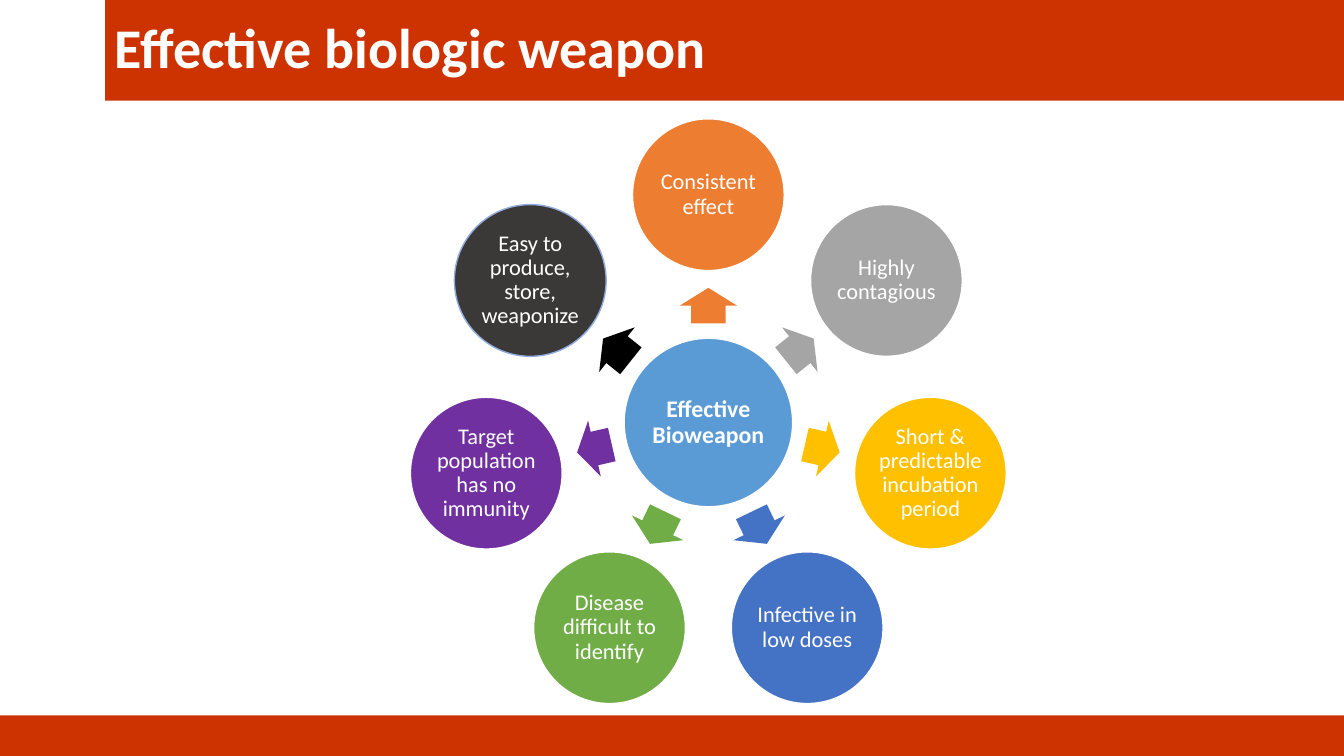
from dataclasses import dataclass
from math import cos, radians, sin

from pptx import Presentation
from pptx.dml.color import RGBColor
from pptx.enum.shapes import MSO_SHAPE
from pptx.enum.text import MSO_ANCHOR, PP_ALIGN
from pptx.util import Pt


@dataclass(frozen=True)
class Theme:
    font: str = "Calibri"
    white: str = "FFFFFF"
    banner: str = "CC3300"
    hub: str = "5B9BD5"
    title_size: int = 40
    hub_size: int = 17
    trait_size: int = 16


theme = Theme()


def add_filled_shape(kind, left, top, width, height, fill, line=None):
    shape = slide.shapes.add_shape(kind, Pt(left), Pt(top), Pt(width), Pt(height))
    shape.shadow.inherit = False
    shape.fill.solid()
    shape.fill.fore_color.rgb = RGBColor.from_string(fill)
    if line:
        shape.line.color.rgb = RGBColor.from_string(line)
        shape.line.width = Pt(1)
    else:
        shape.line.fill.background()
    return shape


def write_text(shape, text, size, bold=False, align=PP_ALIGN.CENTER, inset=1.5):
    frame = shape.text_frame
    frame.word_wrap = True
    frame.vertical_anchor = MSO_ANCHOR.MIDDLE
    frame.margin_left = frame.margin_right = Pt(inset)
    frame.margin_top = frame.margin_bottom = Pt(1.5)
    paragraph = frame.paragraphs[0]
    paragraph.alignment = align
    paragraph.line_spacing = 0.9
    run = paragraph.add_run()
    run.text = text
    run.font.name = theme.font
    run.font.size = Pt(size)
    run.font.bold = bold
    run.font.color.rgb = RGBColor.from_string(theme.white)


presentation = Presentation()
presentation.slide_width = Pt(960)
presentation.slide_height = Pt(540)
slide = presentation.slides.add_slide(presentation.slide_layouts[6])

add_filled_shape(MSO_SHAPE.RECTANGLE, 0, 511, 960, 29, theme.banner)
title = add_filled_shape(MSO_SHAPE.RECTANGLE, 75, 0, 885, 72, theme.banner)
write_text(title, "Effective biologic weapon", theme.title_size,
           bold=True, align=PP_ALIGN.LEFT, inset=7.2)

center_x, center_y = 506, 301.8
hub_diameter, trait_diameter = 120.4, 108.4
trait_radius, arrow_radius = 162.7, 83.5
arrow_width, arrow_height = 25.4, 40.8

hub = add_filled_shape(MSO_SHAPE.OVAL, center_x - hub_diameter / 2, center_y - hub_diameter / 2,
                       hub_diameter, hub_diameter, theme.hub, theme.white)
write_text(hub, "Effective Bioweapon", theme.hub_size, bold=True)

traits = [
    ("Consistent effect", "ED7D31", "ED7D31", theme.white),
    ("Highly contagious", "A5A5A5", "A5A5A5", theme.white),
    ("Short & predictable incubation period", "FFC000", "FFC000", theme.white),
    ("Infective in low doses", "4472C4", "4472C4", theme.white),
    ("Disease difficult to identify", "70AD47", "70AD47", theme.white),
    ("Target population has no immunity", "7030A0", "7030A0", theme.white),
    ("Easy to produce, store, weaponize", "3B3838", "000000", "8FAADC"),
]

for index, (text, circle_color, arrow_color, outline) in enumerate(traits):
    angle = 360 * index / len(traits) - 90
    across, down = cos(radians(angle)), sin(radians(angle))

    arrow = add_filled_shape(MSO_SHAPE.RIGHT_ARROW,
                             center_x + arrow_radius * across - arrow_width / 2,
                             center_y + arrow_radius * down - arrow_height / 2,
                             arrow_width, arrow_height, arrow_color)
    arrow.adjustments[0] = 0.6
    arrow.adjustments[1] = 0.5
    arrow.rotation = angle % 360

    circle = add_filled_shape(MSO_SHAPE.OVAL,
                              center_x + trait_radius * across - trait_diameter / 2,
                              center_y + trait_radius * down - trait_diameter / 2,
                              trait_diameter, trait_diameter, circle_color, outline)
    write_text(circle, text, theme.trait_size)

presentation.save("out.pptx")
